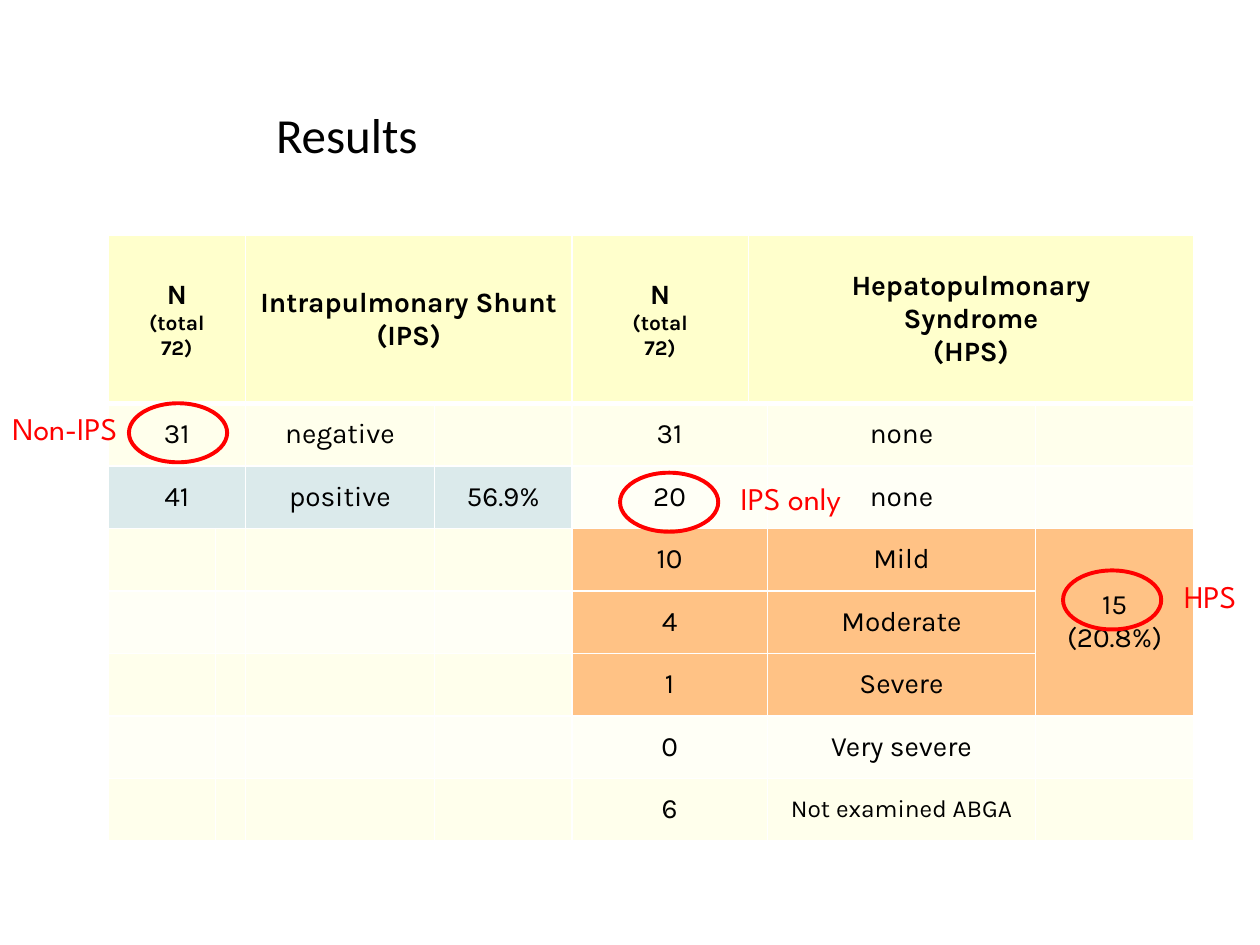
from dataclasses import dataclass

from lxml import etree
from pptx import Presentation
from pptx.dml.color import RGBColor
from pptx.enum.shapes import MSO_SHAPE
from pptx.enum.text import MSO_ANCHOR, PP_ALIGN
from pptx.oxml.ns import qn
from pptx.util import Cm, Pt

ELLIPSE = MSO_SHAPE.OVAL
CENTER, LEFT = PP_ALIGN.CENTER, PP_ALIGN.LEFT
MIDDLE, BOTTOM = MSO_ANCHOR.MIDDLE, MSO_ANCHOR.BOTTOM


@dataclass(frozen=True)
class Theme:
    """Colours, fonts and type sizes of the slide."""
    title_font: str = "Calibri"
    table_font: str = "Karla"
    label_font: str = "League Spartan"
    text: str = "000000"
    border: str = "FFFFFF"
    header: str = "FFFFCC"
    bands: tuple = ("FFFFEC", "FFFFF6")
    shunt: str = "DBEAEB"
    syndrome: str = "FFC285"
    mark: str = "FF0000"
    title_size: int = 28
    label_size: int = 18
    table_size: int = 16
    note_size: int = 14
    total_size: int = 12


THEME = Theme()

COLUMN_WIDTHS = (2.16, 0.58, 3.81, 2.77, 3.56, 0.38, 5.41, 3.18)
HEADER_HEIGHT, ROW_HEIGHT = 3.38, 1.26
COUNT, GRADE, LAST = 4, 6, 7

HEADERS = {
    0: "N\n(total\n72)",
    2: "Intrapulmonary Shunt\n(IPS)",
    4: "N\n(total\n72)",
    5: "Hepatopulmonary\nSyndrome\n(HPS)",
}
SHUNT_ROWS = {1: ("31", "negative", ""), 2: ("41", "positive", "56.9%")}
SYNDROME_ROWS = (
    ("31", "none"),
    ("20", "none"),
    ("10", "Mild"),
    ("4", "Moderate"),
    ("1", "Severe"),
    ("0", "Very severe"),
    ("6", "Not examined ABGA"),
)
SYNDROME_BAND = range(3, 6)
MERGES = (
    [(0, 0, 0, 1), (0, 2, 0, 3), (0, 5, 0, LAST), (3, LAST, 5, LAST)]
    + [(row, 0, row, 1) for row in SHUNT_ROWS]
    + [(row, COUNT, row, COUNT + 1) for row in range(1, 8)]
)
MARKS = (
    ("Non-IPS", 2.6, 8.13, 0),
    ("IPS only", 12.5, 9.53, 14.68),
    ("HPS", 21.43, 11.5, 23.62),
)


def style_font(font, name, size, color, bold=False):
    """Give a font its face, size, colour and weight."""
    font.name, font.size, font.bold = name, Pt(size), bold
    font.color.rgb = RGBColor.from_string(color)


def set_borders(cell, row):
    """Draw white cell borders, thicker below the header."""
    properties = cell._tc.get_or_add_tcPr()
    thick = {0: "lnB", 1: "lnT"}.get(row)
    for side in ("lnL", "lnR", "lnT", "lnB"):
        width = Pt(3 if side == thick else 1)
        line = etree.SubElement(properties, qn(f"a:{side}"), w=str(width))
        fill = etree.SubElement(line, qn("a:solidFill"))
        etree.SubElement(fill, qn("a:srgbClr"), val=THEME.border)


def cell_color(row, column):
    """Return the fill of a cell from its place in the table."""
    if row == 0:
        return THEME.header
    if row == 2 and column < COUNT:
        return THEME.shunt
    if row in SYNDROME_BAND and column >= COUNT:
        return THEME.syndrome
    return THEME.bands[(row - 1) % 2]


def write_cell(cell, text, size=THEME.table_size, bold=False):
    """Write centred lines into a cell."""
    cell.text = text
    cell.vertical_anchor = MIDDLE
    for paragraph in cell.text_frame.paragraphs:
        paragraph.alignment = CENTER
        style_font(paragraph.font, THEME.table_font, size, THEME.text, bold)


def fill_header(table):
    """Write the header row, with the totals in smaller type."""
    for column, text in HEADERS.items():
        cell = table.cell(0, column)
        write_cell(cell, text, bold=True)
        if text.startswith("N\n"):
            for paragraph in cell.text_frame.paragraphs[1:]:
                paragraph.font.size = Pt(THEME.total_size)


def fill_body(table):
    """Write the shunt and syndrome counts."""
    for row, values in SHUNT_ROWS.items():
        for column, text in zip((0, 2, 3), values):
            if text:
                write_cell(table.cell(row, column), text)
    for row, (count, grade) in enumerate(SYNDROME_ROWS, start=1):
        is_note = row == len(SYNDROME_ROWS)
        write_cell(table.cell(row, COUNT), count)
        write_cell(table.cell(row, GRADE), grade,
                   THEME.note_size if is_note else THEME.table_size)
    write_cell(table.cell(SYNDROME_BAND[0], LAST), "15\n(20.8%)")


def add_title(slide, left, top, width, height):
    """Place the slide title in its placeholder."""
    title = slide.shapes.title
    title.left, title.top = Cm(left), Cm(top)
    title.width, title.height = Cm(width), Cm(height)
    title.text_frame.text = "Results"
    title.text_frame.vertical_anchor = BOTTOM
    paragraph = title.text_frame.paragraphs[0]
    paragraph.alignment = LEFT
    style_font(paragraph.font, THEME.title_font, THEME.title_size, THEME.text)


def add_results_table(slide, left, top):
    """Build the results table from its top left corner."""
    row_count = len(SYNDROME_ROWS) + 1
    heights = [HEADER_HEIGHT] + [ROW_HEIGHT] * len(SYNDROME_ROWS)
    table = slide.shapes.add_table(
        row_count, len(COLUMN_WIDTHS), Cm(left), Cm(top),
        Cm(sum(COLUMN_WIDTHS)), Cm(sum(heights))).table
    for column, width in zip(table.columns, COLUMN_WIDTHS):
        column.width = Cm(width)
    for row, height in enumerate(heights):
        table.rows[row].height = Cm(height)
        for column in range(len(COLUMN_WIDTHS)):
            cell = table.cell(row, column)
            set_borders(cell, row)
            cell.fill.solid()
            cell.fill.fore_color.rgb = RGBColor.from_string(cell_color(row, column))
    for top_row, first, bottom_row, last in MERGES:
        table.cell(top_row, first).merge(table.cell(bottom_row, last))
    fill_header(table)
    fill_body(table)


def add_ring(slide, left, top):
    """Circle a count in the table."""
    ring = slide.shapes.add_shape(ELLIPSE, Cm(left), Cm(top), Cm(1.98), Cm(1.19))
    ring.shadow.inherit = False
    ring.fill.background()
    ring.line.color.rgb = RGBColor.from_string(THEME.mark)
    ring.line.width = Pt(2.25)


def add_label(slide, text, left, top):
    """Name a circled group."""
    box = slide.shapes.add_textbox(Cm(left), Cm(top), Cm(3.58), Cm(1.02))
    box.text_frame.word_wrap = True
    box.text_frame.text = text
    style_font(box.text_frame.paragraphs[0].font,
               THEME.label_font, THEME.label_size, THEME.mark)


def main():
    """Build and save the slide."""
    presentation = Presentation()
    presentation.slide_width, presentation.slide_height = Cm(25.4), Cm(19.05)
    slide = presentation.slides.add_slide(presentation.slide_layouts[5])
    add_title(slide, 5.31, 0.64, 19, 2.79)
    add_results_table(slide, 2.18, 4.75)
    for _, ring_left, top, _ in MARKS:
        add_ring(slide, ring_left, top)
    for text, _, top, label_left in MARKS:
        add_label(slide, text, label_left, top)
    presentation.save("out.pptx")


if __name__ == "__main__":
    main()
